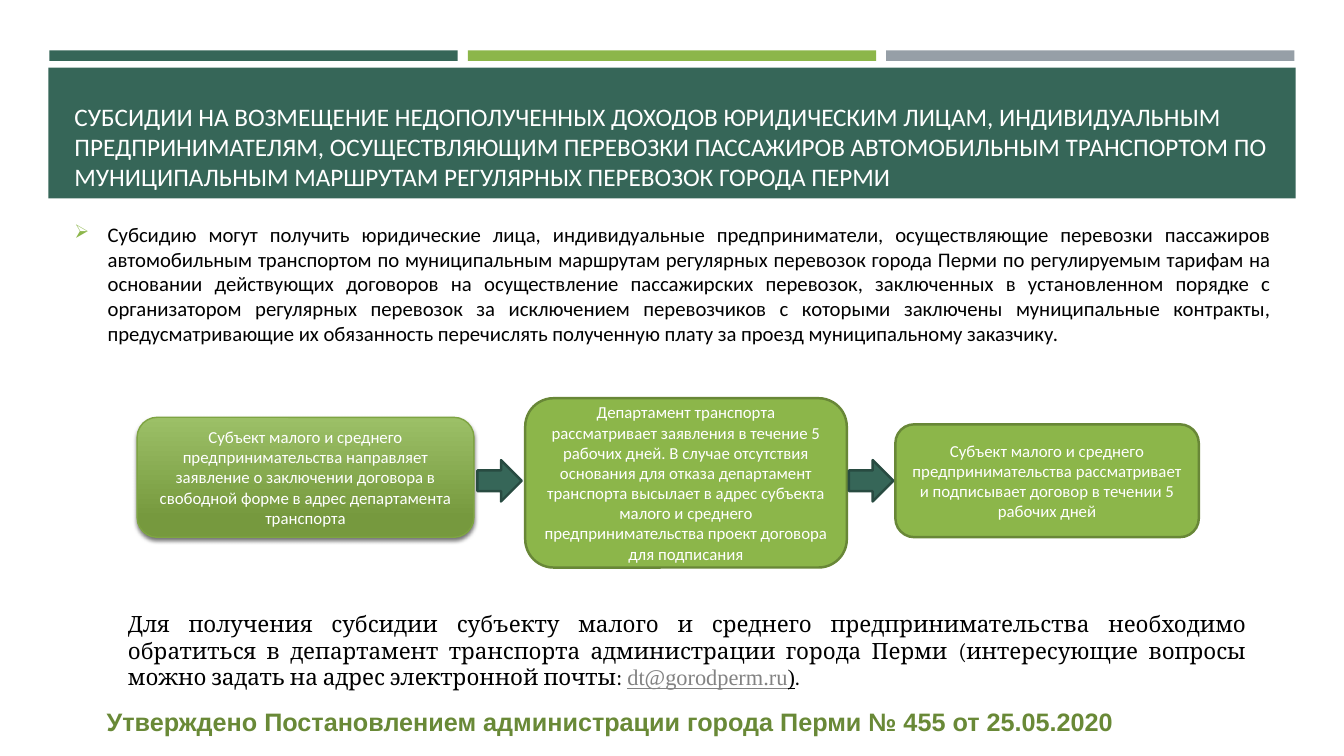
from dataclasses import dataclass
from itertools import pairwise
from lxml.etree import SubElement
from pptx import Presentation
from pptx.dml.color import RGBColor
from pptx.enum.shapes import MSO_SHAPE
from pptx.enum.text import MSO_ANCHOR, PP_ALIGN
from pptx.oxml.ns import qn
from pptx.util import Inches, Pt

TITLE = "СУБСИДИИ НА ВОЗМЕЩЕНИЕ НЕДОПОЛУЧЕННЫХ ДОХОДОВ ЮРИДИЧЕСКИМ ЛИЦАМ, ИНДИВИДУАЛЬНЫМ ПРЕДПРИНИМАТЕЛЯМ, ОСУЩЕСТВЛЯЮЩИМ ПЕРЕВОЗКИ ПАССАЖИРОВ АВТОМОБИЛЬНЫМ ТРАНСПОРТОМ ПО МУНИЦИПАЛЬНЫМ МАРШРУТАМ РЕГУЛЯРНЫХ ПЕРЕВОЗОК ГОРОДА ПЕРМИ"
TERMS = "Субсидию могут получить юридические лица, индивидуальные предприниматели, осуществляющие перевозки пассажиров автомобильным транспортом по муниципальным маршрутам регулярных перевозок города Перми по регулируемым тарифам на основании действующих договоров на осуществление пассажирских перевозок, заключенных в установленном порядке с организатором регулярных перевозок за исключением перевозчиков с которыми заключены муниципальные контракты, предусматривающие их обязанность перечислять полученную плату за проезд муниципальному заказчику."
ASK = "Для получения субсидии субъекту малого и среднего предпринимательства необходимо обратиться в департамент транспорта администрации города Перми (интересующие вопросы можно задать на адрес электронной почты: "
MAIL = "dt@gorodperm.ru"
ORDER = "Утверждено Постановлением администрации города Перми № 455 от 25.05.2020"

# Places are left, top, width, height in percent of the slide.
STEPS = [
    ("Субъект малого и среднего предпринимательства направляет заявление о заключении договора в свободной форме в адрес департамента транспорта",
     (10.2, 55.2, 25.06, 15.87)),
    ("Департамент транспорта рассматривает заявления в течение 5 рабочих дней. В случае отсутствия основания для отказа департамент транспорта высылает в адрес субъекта малого и среднего предпринимательства проект договора для подписания",
     (39.08, 52.67, 23.93, 22.4)),
    ("Субъект малого и среднего предпринимательства рассматривает и подписывает договор в течении 5 рабочих дней",
     (66.62, 56.13, 22.58, 14.93)),
]


@dataclass(frozen=True)
class Theme:
    dark: str = "366658"
    edge: str = "284B41"
    green: str = "8CB64A"
    rim: str = "688737"
    moss: str = "698937"
    gray: str = "969FA7"
    link: str = "828282"
    white: str = "FFFFFF"
    black: str = "000000"
    glow: tuple = ("9CC067", "76993E", "7EA442")
    head: float = 18
    body: float = 14.8
    ask: float = 16
    step: float = 12


T = Theme()
deck = Presentation()
deck.slide_width, deck.slide_height = Inches(13.33), Inches(7.5)
slide = deck.slides.add_slide(deck.slide_layouts[6])
rgb = RGBColor.from_string


def place(box):
    """Turn percent of the slide into lengths."""
    sides = (deck.slide_width, deck.slide_height) * 2
    return [round(side * part / 100) for side, part in zip(sides, box)]


def draw(kind, box, fill, line=None, width=1.75):
    shape = slide.shapes.add_shape(kind, *place(box))
    shape.shadow.inherit = False
    shape.fill.solid()
    shape.fill.fore_color.rgb = rgb(fill)
    if line:
        shape.line.color.rgb = rgb(line)
        shape.line.width = Pt(width)
    else:
        shape.line.fill.background()
    return shape


def write(shape, runs, size, align=PP_ALIGN.LEFT, anchor=MSO_ANCHOR.TOP):
    """Fill a shape with runs of text, font, colour, bold, underline."""
    frame = shape.text_frame
    frame.word_wrap = True
    frame.vertical_anchor = anchor
    para = frame.paragraphs[0]
    para.alignment = align
    for text, face, color, bold, under in runs:
        run = para.add_run()
        run.text = text
        font = run.font
        font.name, font.size, font.bold, font.underline = face, Pt(size), bold, under
        font.color.rgb = rgb(color)
    return para


def label(box, *rest):
    return write(slide.shapes.add_textbox(*place(box)), *rest)


def plain(text, color, face="Calibri", bold=False):
    return [(text, face, color, bold, False)]


def bullet(para, mark, color):
    props = para._p.get_or_add_pPr()
    props.set("marL", str(Inches(0.33)))
    props.set("indent", str(-Inches(0.33)))
    SubElement(SubElement(props, qn("a:buClr")), qn("a:srgbClr"), val=color)
    SubElement(props, qn("a:buSzPct"), val="92000")
    SubElement(props, qn("a:buChar"), char=mark)


def shine(shape):
    """Give a step its gradient and soft shadow."""
    shape.fill.gradient()
    shape.fill.gradient_angle = 270
    for stop, color, spot in zip(shape.fill.gradient_stops, T.glow, (0, 0.84)):
        stop.color.rgb = rgb(color)
        stop.position = spot
    props = shape._element.spPr
    cast = SubElement(props.find(qn("a:effectLst")), qn("a:outerShdw"),
                      blurRad=str(Pt(3)), dist=str(Pt(2)), dir="5400000", rotWithShape="0")
    tone = SubElement(cast, qn("a:srgbClr"), val=T.black)
    SubElement(tone, qn("a:alpha"), val="55000")


for col, color in enumerate((T.dark, T.green, T.gray)):
    draw(MSO_SHAPE.RECTANGLE, (3.68 + 31.13 * col, 6.67, 30.38, 1.4), color)
draw(MSO_SHAPE.RECTANGLE, (3.6, 8.93, 92.8, 17.33), T.dark)
label((4.8, 11.2, 90.47, 14.8), plain(TITLE, T.white), T.head,
      PP_ALIGN.LEFT, MSO_ANCHOR.BOTTOM)

terms = label((4.8, 27.33, 90.47, 20.4), plain(TERMS, T.black), T.body,
              PP_ALIGN.JUSTIFY, MSO_ANCHOR.MIDDLE)
terms.space_before, terms.space_after = Pt(3), Pt(6)
bullet(terms, "➢", T.green)

label((7.2, 92.8, 91.37, 5.33), plain(ORDER, T.moss, "Arial", True), T.head)
label((8.78, 80, 84.77, 12.53), [
    (ASK, "Cambria", T.black, False, False),
    (MAIL, "Times New Roman", T.link, False, True),
    (")", "Times New Roman", T.black, False, True),
    (".", "Cambria", T.black, False, False),
], T.ask, PP_ALIGN.JUSTIFY)

for turn, (text, box) in enumerate(STEPS):
    first = turn == 0
    step = draw(MSO_SHAPE.ROUNDED_RECTANGLE, box, T.green,
                T.glow[2] if first else T.rim, 1 if first else 1.75)
    if first:
        shine(step)
    write(step, plain(text, T.white), T.step, PP_ALIGN.CENTER, MSO_ANCHOR.MIDDLE)

wide, high, mid = 3.3, 5.47, 63.6
for (_, prev), (_, after) in pairwise(STEPS):
    center = (prev[0] + prev[2] + after[0]) / 2
    draw(MSO_SHAPE.RIGHT_ARROW, (center - wide / 2, mid - high / 2, wide, high),
         T.dark, T.edge)

deck.save("out.pptx")
